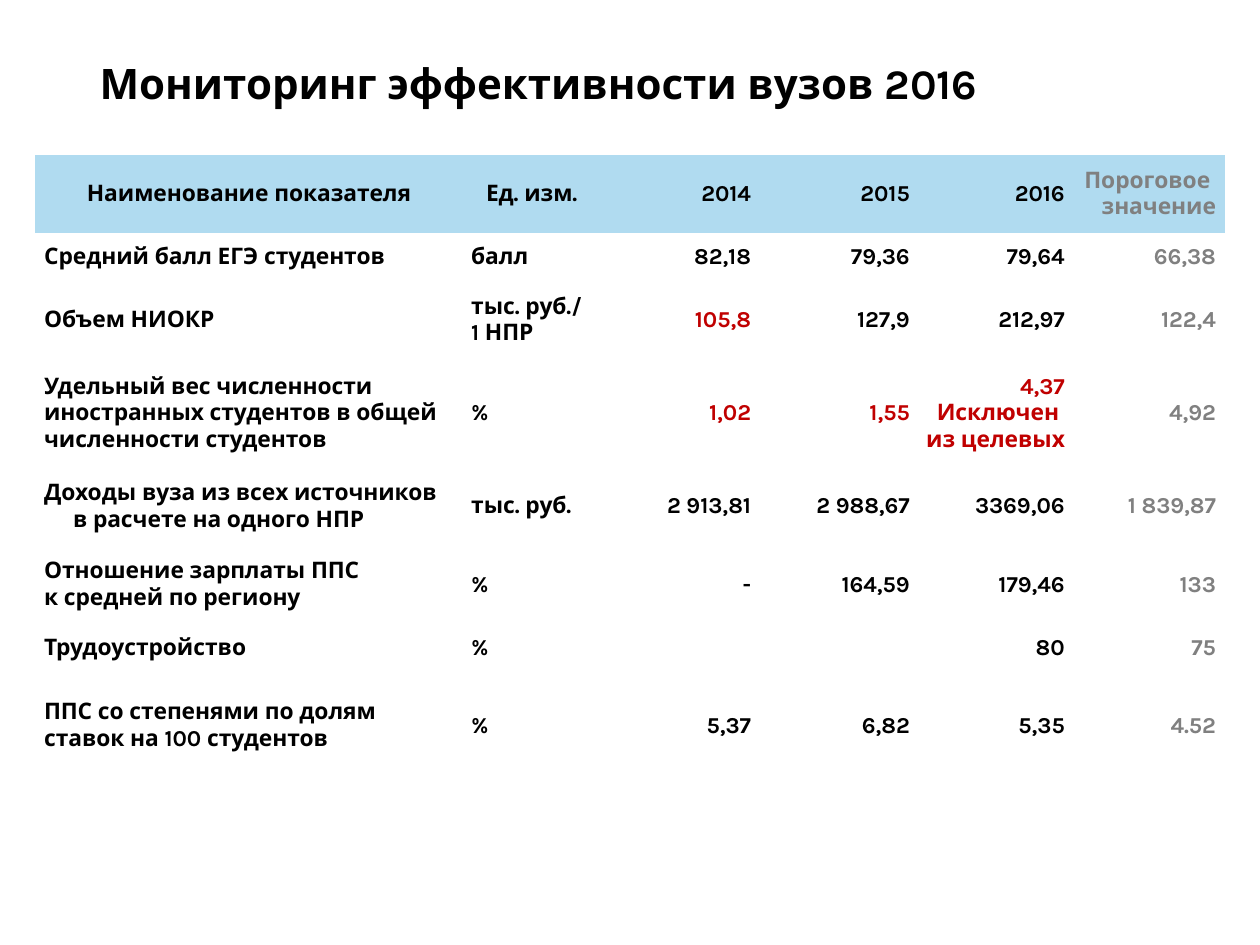
from pptx import Presentation
from pptx.dml.color import RGBColor
from pptx.enum.text import MSO_ANCHOR, MSO_AUTO_SIZE, PP_ALIGN
from pptx.oxml.ns import qn
from pptx.util import Inches, Pt

COLORS = {
    "text": "000000",
    "threshold": "808080",
    "below": "C00000",
    "header": "B0DBF0",
    "band": "FFFFFF",
}
FONT = "Karla"
NO_STYLE = "{2D5ABB26-0587-4C30-8999-92F81FD0307C}"
COLUMN_WIDTHS = [3.39, 1.1, 1.26, 1.23, 1.23, 1.23]
ROW_HEIGHTS = [0.62, 0.38, 0.62, 0.86, 0.62, 0.62, 0.38, 0.86]
NARROW_MARGIN_COLUMNS = (3, 4)
BELOW_THRESHOLD = {(2, 2), (3, 2), (3, 3), (3, 4)}
INCOME_CELL = (4, 0)

ROWS = [
    ["Наименование показателя", "Ед. изм.", "2014", "2015", "2016", "Пороговое \nзначение"],
    ["Средний балл ЕГЭ студентов", "балл", "82,18", "79,36", "79,64", "66,38"],
    ["Объем НИОКР", "тыс. руб./\n1 НПР", "105,8", "127,9", "212,97", "122,4"],
    ["Удельный вес численности иностранных студентов в общей численности студентов",
     "%", "1,02", "1,55", "4,37\nИсключен \vиз целевых", "4,92"],
    ["Доходы вуза из всех источников\vв расчете на одного НПР",
     "тыс. руб.", "2 913,81", "2 988,67", "3369,06", "1 839,87"],
    ["Отношение зарплаты ППС\nк средней по региону", "%", "-", "164,59", "179,46", "133"],
    ["Трудоустройство", "%", "", "", "80", "75"],
    ["ППС со степенями по долям ставок на 100 студентов",
     "%", "5,37", "6,82", "5,35", "4.52"],
]


def format_text(text_frame, size, color, alignment):
    for paragraph in text_frame.paragraphs:
        paragraph.alignment = alignment
        for run in paragraph.runs:
            run.font.name = FONT
            run.font.size = Pt(size)
            run.font.bold = True
            run.font.color.rgb = RGBColor.from_string(COLORS[color])


presentation = Presentation()
presentation.slide_width = Inches(10)
presentation.slide_height = Inches(7.5)
slide = presentation.slides.add_slide(presentation.slide_layouts[5])

title = slide.shapes.title
title.left, title.top = Inches(0.69), Inches(0.4)
title.width, title.height = Inches(8.62), Inches(0.52)
title.text_frame.text = "Мониторинг эффективности вузов 2016"
title.text_frame.auto_size = MSO_AUTO_SIZE.NONE
title.text_frame.vertical_anchor = MSO_ANCHOR.MIDDLE
format_text(title.text_frame, 24, "text", PP_ALIGN.LEFT)

table_shape = slide.shapes.add_table(
    len(ROWS), len(COLUMN_WIDTHS), Inches(0.28), Inches(1.23),
    Inches(sum(COLUMN_WIDTHS)), Inches(sum(ROW_HEIGHTS)))
table = table_shape.table
table.first_row = False
table.horz_banding = False
table._tbl.tblPr.find(qn("a:tableStyleId")).text = NO_STYLE

for column, width in zip(table.columns, COLUMN_WIDTHS):
    column.width = Inches(width)
for row, height in zip(table.rows, ROW_HEIGHTS):
    row.height = Inches(height)

for row_index, values in enumerate(ROWS):
    for column_index, value in enumerate(values):
        cell = table.cell(row_index, column_index)
        cell.text_frame.text = value
        cell.vertical_anchor = MSO_ANCHOR.MIDDLE
        narrow = column_index in NARROW_MARGIN_COLUMNS
        cell.margin_left = cell.margin_right = Inches(0.04 if narrow else 0.07)
        vertical_margin = 0.04 if narrow else 0.06
        cell.margin_top = cell.margin_bottom = Inches(vertical_margin if value else 0)

        if row_index == 0:
            cell.fill.solid()
            cell.fill.fore_color.rgb = RGBColor.from_string(COLORS["header"])
        elif row_index in (2, 4, 7):
            cell.fill.solid()
            cell.fill.fore_color.rgb = RGBColor.from_string(COLORS["band"])
        else:
            cell.fill.background()

        if column_index >= 2:
            alignment = PP_ALIGN.RIGHT
        elif row_index == 0:
            alignment = PP_ALIGN.CENTER
        else:
            alignment = PP_ALIGN.LEFT

        if (row_index, column_index) in BELOW_THRESHOLD:
            color = "below"
        elif column_index == 5:
            color = "threshold"
        else:
            color = "text"
        format_text(cell.text_frame, 13, color, alignment)

income_paragraph = table.cell(*INCOME_CELL).text_frame.paragraphs[0]
income_properties = income_paragraph._p.get_or_add_pPr()
income_properties.set("marL", str(Inches(0.23)))
income_properties.set("indent", str(-Inches(0.23)))

presentation.save("out.pptx")
